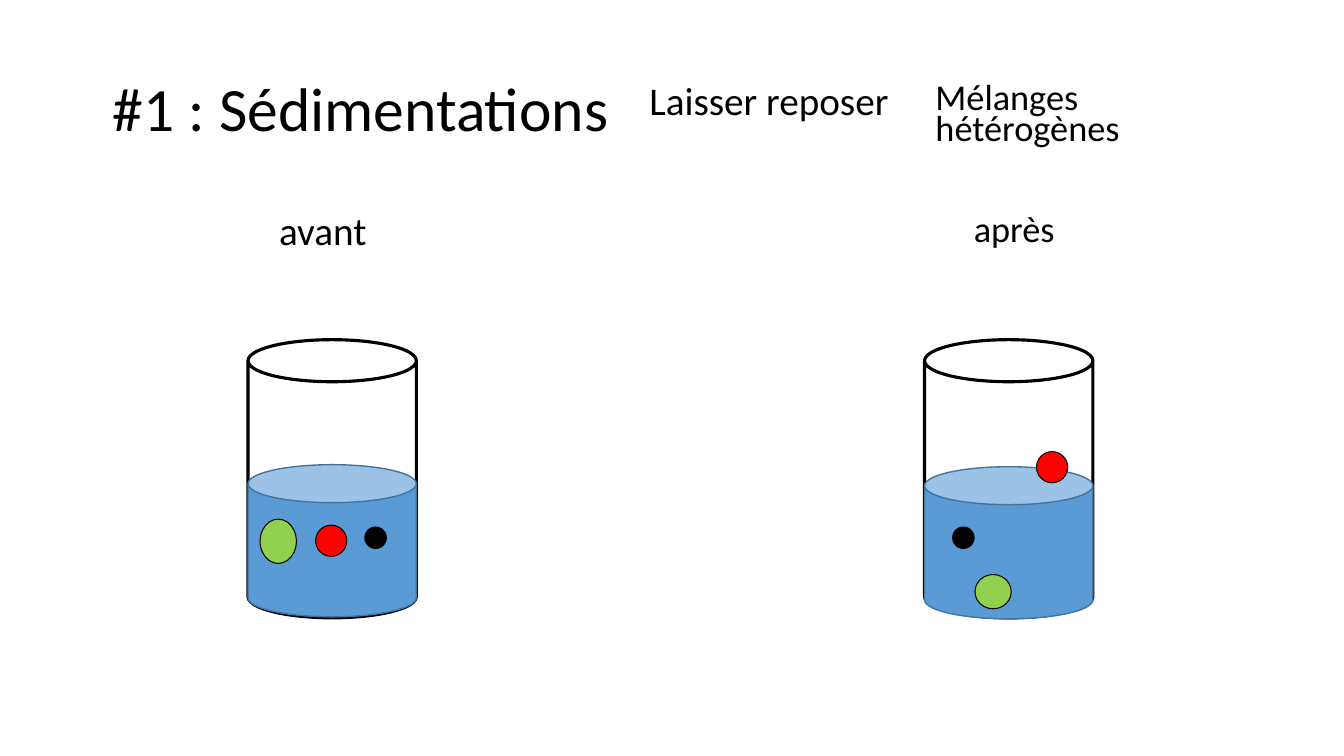
"""Build the slide on sedimentation, with a jar before and after settling."""
import pptx
import pptx.dml.color
import pptx.enum.shapes
import pptx.enum.text
import pptx.oxml
import pptx.oxml.ns
import pptx.util

Inches, Pt = pptx.util.Inches, pptx.util.Pt
Shape = pptx.enum.shapes.MSO_SHAPE

TITLE = ("#1 : Sédimentations", (1.02, 0.38, 11.5, 1.45))
METHOD = ("Laisser reposer", (6.34, 0.76, 3.35, 0.72))
LABELS = [
    ("Mélanges hétérogènes", (9.18, 0.81, 3.35, 0.72), 25.9, 0.7),
    ("avant", (2.67, 2.05, 1.24, 0.72), 28, 0.9),
    ("après", (9.56, 2.05, 1.01, 0.72), 25.9, 0.9),
]
JARS = [
    {"left": 2.46, "water": 4.61, "balls": [
        ("000000", 1, (3.62, 5.23, 0.21, 0.21)),
        ("FF0000", 0.75, (3.13, 5.21, 0.31, 0.31)),
        ("92D050", 0.75, (2.58, 5.15, 0.36, 0.44))]},
    {"left": 9.17, "water": 4.63, "balls": [
        ("000000", 1, (9.45, 5.23, 0.21, 0.21)),
        ("FF0000", 0.75, (10.28, 4.48, 0.31, 0.31)),
        ("92D050", 0.75, (9.67, 5.7, 0.36, 0.34))]},
]
JAR_TOP, JAR_WIDTH, JAR_HEIGHT, WATER_HEIGHT = 3.37, 1.67, 2.76, 1.51


def color(code):
    return pptx.dml.color.RGBColor.from_string(code)


def place(shape, box):
    shape.left, shape.top, shape.width, shape.height = map(Inches, box)


def write(shape, text, size=28, space=0.9, before=10, anchor="TOP"):
    frame = shape.text_frame
    frame.word_wrap = True
    frame.auto_size = pptx.enum.text.MSO_AUTO_SIZE.NONE
    frame.vertical_anchor = getattr(pptx.enum.text.MSO_ANCHOR, anchor)
    para = frame.paragraphs[0]
    para.alignment = pptx.enum.text.PP_ALIGN.LEFT
    para.line_spacing, para.space_before = space, Pt(before)
    run = para.add_run()
    run.text = text
    run.font.name, run.font.size = "Calibri", Pt(size)
    run.font.color.rgb = color("000000")


def draw(slide, kind, box, fill, line, width):
    shape = slide.shapes.add_shape(kind, *map(Inches, box))
    shape.shadow.inherit = False
    shape.fill.solid()
    shape.fill.fore_color.rgb = color(fill)
    shape.line.color.rgb = color(line)
    shape.line.width = Pt(width)


def main():
    deck = pptx.Presentation()
    deck.slide_width, deck.slide_height = Inches(13.33), Inches(7.5)
    slide = deck.slides.add_slide(deck.slide_layouts[1])

    title, body = slide.shapes.title, slide.placeholders[1]
    place(title, TITLE[1])
    write(title, TITLE[0], size=44, before=0, anchor="MIDDLE")
    place(body, METHOD[1])
    write(body, METHOD[0])
    props = body.text_frame.paragraphs[0]._p.get_or_add_pPr()
    props.set("marL", "0")
    props.set("indent", "0")
    props.append(pptx.oxml.parse_xml(
        "<a:buNone %s/>" % pptx.oxml.ns.nsdecls("a")))

    for jar in JARS:
        left = jar["left"]
        draw(slide, Shape.CAN, (left, JAR_TOP, JAR_WIDTH, JAR_HEIGHT),
             "FFFFFF", "000000", 2.25)
        draw(slide, Shape.CAN, (left, jar["water"], JAR_WIDTH, WATER_HEIGHT),
             "5B9BD5", "43739E", 1)
    for jar in JARS:
        for fill, width, box in jar["balls"]:
            draw(slide, Shape.OVAL, box, fill, "000000", width)

    for text, box, size, space in LABELS:
        label = slide.shapes.add_textbox(*map(Inches, box))
        write(label, text, size=size, space=space)
    deck.save("out.pptx")


if __name__ == "__main__":
    main()
